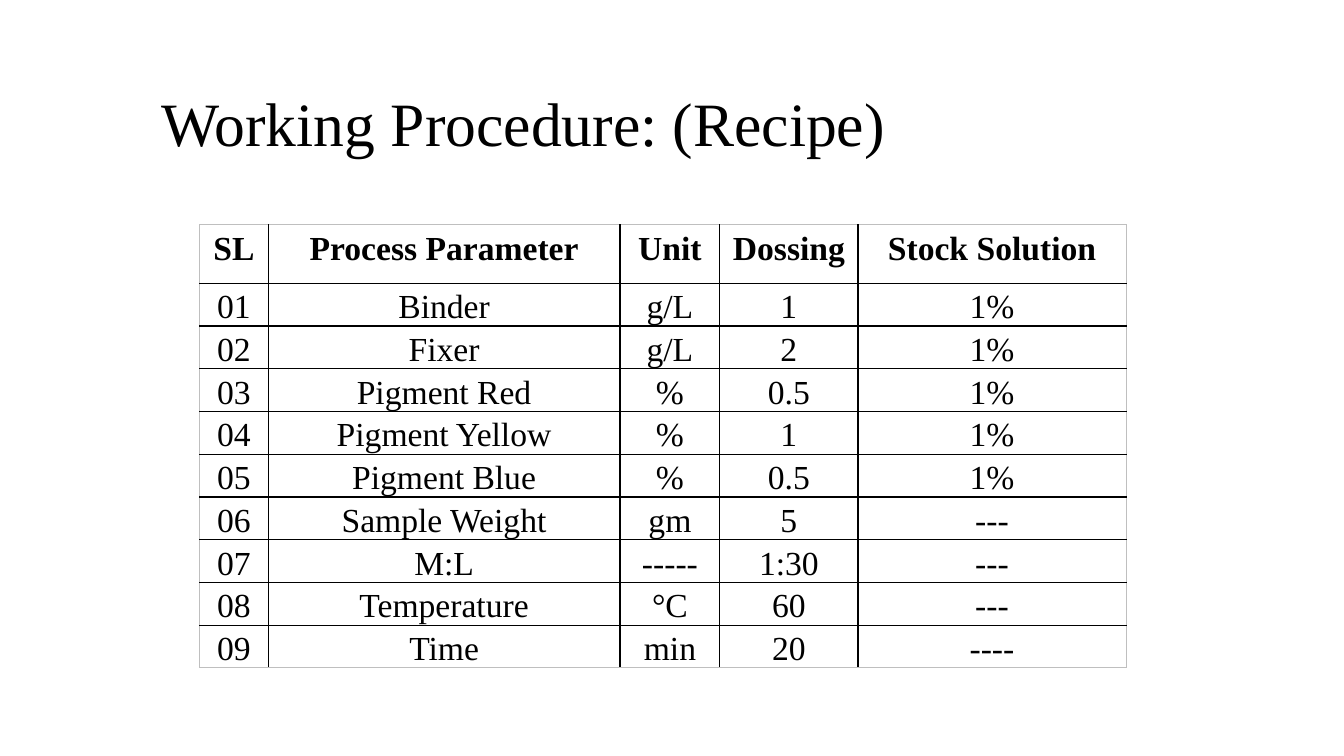
from lxml import etree
from pptx import Presentation
from pptx.dml.color import RGBColor
from pptx.enum.text import MSO_ANCHOR, MSO_AUTO_SIZE, PP_ALIGN
from pptx.oxml.ns import qn
from pptx.util import Inches, Pt

LEFT, CENTER = PP_ALIGN.LEFT, PP_ALIGN.CENTER
TOP, MIDDLE = MSO_ANCHOR.TOP, MSO_ANCHOR.MIDDLE
NO_AUTOFIT = MSO_AUTO_SIZE.NONE
TITLE_ONLY = 5

THEME = {
    "font": "Times New Roman",
    "text": "000000",
    "grid": "000000",
    "frame": "BFBFBF",
    "title_size": 44,
    "table_size": 24,
    "line_width": 1,
}

RECIPE = [
    ("SL", "Process Parameter", "Unit", "Dossing", "Stock Solution"),
    ("01", "Binder", "g/L", "1", "1%"),
    ("02", "Fixer", "g/L", "2", "1%"),
    ("03", "Pigment Red", "%", "0.5", "1%"),
    ("04", "Pigment Yellow", "%", "1", "1%"),
    ("05", "Pigment Blue", "%", "0.5", "1%"),
    ("06", "Sample Weight", "gm", "5", "---"),
    ("07", "M:L", "-----", "1:30", "---"),
    ("08", "Temperature", "°C", "60", "---"),
    ("09", "Time", "min", "20", "----"),
]
COLUMN_WIDTHS = [0.68, 3.49, 0.99, 1.37, 2.66]
HEADER_HEIGHT, ROW_HEIGHT = 0.58, 0.42


def format_paragraph(paragraph, size, align, spacing, bold=False):
    paragraph.alignment = align
    paragraph.line_spacing = spacing
    for run in paragraph.runs:
        run.font.name = THEME["font"]
        run.font.size = Pt(size)
        run.font.bold = bold
        run.font.color.rgb = RGBColor.from_string(THEME["text"])


def add_borders(cell, colors):
    properties = cell._tc.get_or_add_tcPr()
    for position, (side, color) in enumerate(colors.items()):
        line = etree.Element(qn(f"a:{side}"), w=str(Pt(THEME["line_width"])))
        fill = etree.SubElement(line, qn("a:solidFill"))
        etree.SubElement(fill, qn("a:srgbClr"), val=color)
        properties.insert(position, line)


prs = Presentation()
prs.slide_width, prs.slide_height = Inches(13.33), Inches(7.5)
slide = prs.slides.add_slide(prs.slide_layouts[TITLE_ONLY])

# Title
title = slide.shapes.title
title.left, title.top = Inches(1.5), Inches(0.75)
title.width, title.height = Inches(10.5), Inches(1.02)
title.text_frame.text = "Working Procedure: (Recipe)"
title.text_frame.auto_size = NO_AUTOFIT
title.text_frame.vertical_anchor = MIDDLE
format_paragraph(title.text_frame.paragraphs[0], THEME["title_size"], LEFT, 0.9)

# Recipe table
last_row, last_column = len(RECIPE) - 1, len(COLUMN_WIDTHS) - 1
recipe = slide.shapes.add_table(
    len(RECIPE), len(COLUMN_WIDTHS), Inches(1.98), Inches(2.23),
    Inches(sum(COLUMN_WIDTHS)), Inches(HEADER_HEIGHT + last_row * ROW_HEIGHT),
).table
recipe.horz_banding = False
for column, width in zip(recipe.columns, COLUMN_WIDTHS):
    column.width = Inches(width)

for r, entries in enumerate(RECIPE):
    recipe.rows[r].height = Inches(ROW_HEIGHT if r else HEADER_HEIGHT)
    for c, entry in enumerate(entries):
        cell = recipe.cell(r, c)
        cell.text_frame.text = entry
        cell.vertical_anchor = TOP
        cell.margin_left = cell.margin_right = Inches(0.07)
        cell.margin_top = cell.margin_bottom = 0
        cell.fill.background()
        format_paragraph(cell.text_frame.paragraphs[0], THEME["table_size"],
                         CENTER, 1.15, bold=r == 0)
        # Grey outer frame, black inner grid
        outer = {"lnL": c == 0, "lnR": c == last_column,
                 "lnT": r == 0, "lnB": r == last_row}
        add_borders(cell, {side: THEME["frame" if is_outer else "grid"]
                           for side, is_outer in outer.items()})

prs.save("out.pptx")
